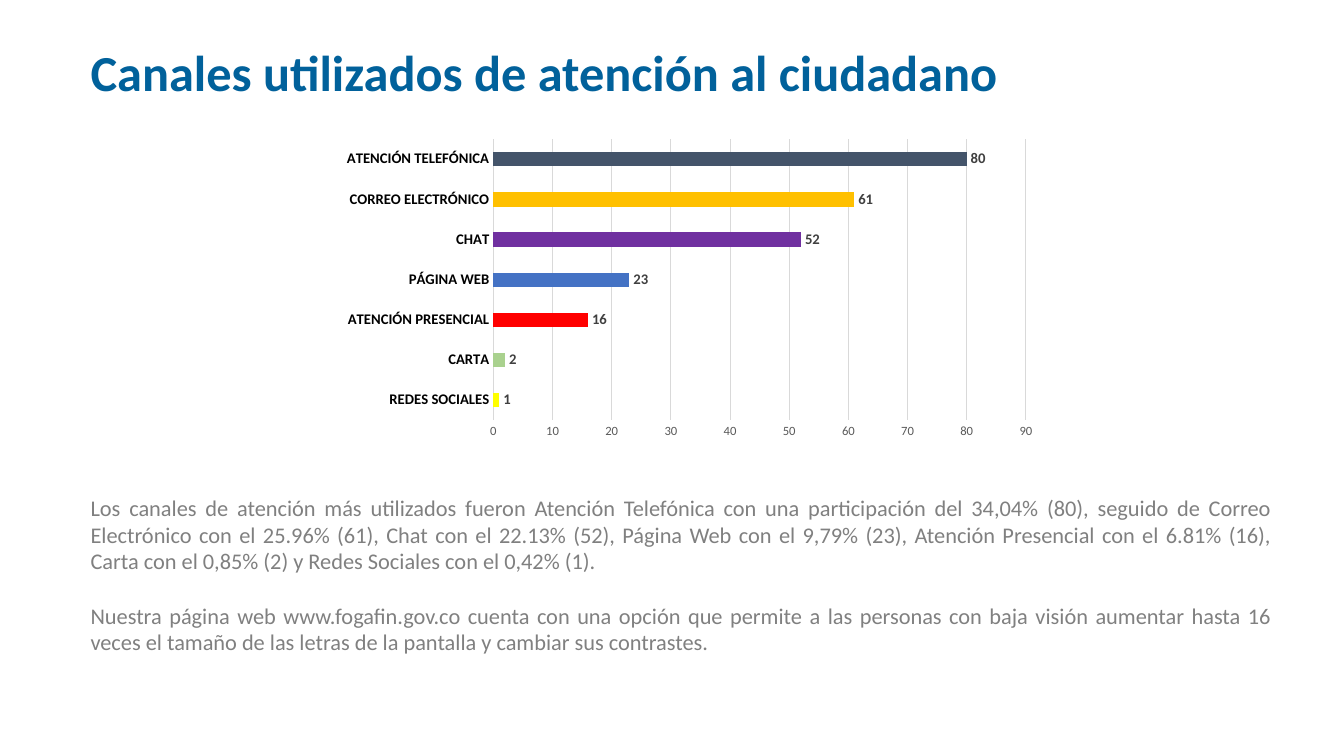
from pptx import Presentation
from pptx.chart.data import CategoryChartData
from pptx.dml.color import RGBColor
from pptx.enum.chart import XL_CHART_TYPE, XL_LABEL_POSITION, XL_TICK_MARK
from pptx.enum.text import MSO_ANCHOR, PP_ALIGN
from pptx.util import Pt

FACE = "Calibri"
BARS = [
    ("REDES SOCIALES", 1, "FFFF00"),
    ("CARTA", 2, "A9D18E"),
    ("ATENCIÓN PRESENCIAL", 16, "FF0000"),
    ("PÁGINA WEB", 23, "4472C4"),
    ("CHAT", 52, "7030A0"),
    ("CORREO ELECTRÓNICO", 61, "FFC000"),
    ("ATENCIÓN TELEFÓNICA", 80, "44546A"),
]
NOTES = [
    "Los canales de atención más utilizados fueron Atención Telefónica con una "
    "participación del 34,04% (80), seguido de Correo Electrónico con el 25.96% (61), "
    "Chat con el 22.13% (52), Página Web con el 9,79% (23), Atención Presencial con el "
    "6.81% (16), Carta con el 0,85% (2) y Redes Sociales con el 0,42% (1).",
    "Nuestra página web www.fogafin.gov.co cuenta con una opción que permite a las "
    "personas con baja visión aumentar hasta 16 veces el tamaño de las letras de la "
    "pantalla y cambiar sus contrastes.",
]


def paint(target, color):
    """Give a fill, or a font's or line's fill, a solid hex colour."""
    target.solid()
    target.fore_color.rgb = RGBColor.from_string(color)


def style(font, size, color, bold=False):
    """Set the face, size, colour and weight of a font."""
    font.name, font.size, font.bold = FACE, Pt(size), bold
    paint(font.fill, color)


def write(slide, box, texts, size, color, bold=False, align=PP_ALIGN.LEFT,
          anchor=MSO_ANCHOR.TOP, gap=0, lead=1.0):
    """Add a wrapped text box with one paragraph per text."""
    frame = slide.shapes.add_textbox(*map(Pt, box)).text_frame
    frame.word_wrap = True
    frame.vertical_anchor = anchor
    for i, text in enumerate(texts):
        para = frame.add_paragraph() if i else frame.paragraphs[0]
        para.alignment, para.line_spacing = align, lead
        para.space_before = Pt(gap if i else 0)
        run = para.add_run()
        run.text = text
        style(run.font, size, color, bold)


def rule(line):
    """Draw an axis or grid line in thin pale grey."""
    line.width = Pt(0.75)
    paint(line.fill, "D9D9D9")


def plot(slide, box):
    """Add the bar chart of contacts by channel."""
    data = CategoryChartData()
    data.categories = [name for name, _, _ in BARS]
    data.add_series("Series 1", [count for _, count, _ in BARS])
    chart = slide.shapes.add_chart(
        XL_CHART_TYPE.BAR_CLUSTERED, *map(Pt, box), data).chart
    chart.has_legend = chart.has_title = False
    style(chart.font, 10, "000000")

    names, scale = chart.category_axis, chart.value_axis
    for axis in (names, scale):
        axis.major_tick_mark = axis.minor_tick_mark = XL_TICK_MARK.NONE
    style(names.tick_labels.font, 10.5, "000000", True)
    rule(names.format.line)
    style(scale.tick_labels.font, 9, "595959")
    scale.format.line.fill.background()
    scale.minimum_scale, scale.maximum_scale, scale.major_unit = 0, 90, 10
    scale.has_major_gridlines = True
    rule(scale.major_gridlines.format.line)

    bars = chart.plots[0]
    bars.gap_width, bars.vary_by_categories = 182, False
    series = bars.series[0]
    paint(series.format.fill, "5B9BD5")
    for i, (_, _, color) in enumerate(BARS):
        paint(series.points[i].format.fill, color)
    labels = series.data_labels
    labels.show_value = True
    labels.position = XL_LABEL_POSITION.OUTSIDE_END
    style(labels.font, 10.5, "404040", True)


def build(slide, box):
    """Place the title, chart and notes within the given box."""
    left, top, width, _ = box
    write(slide, (left, top, 762.5, 78.5), ["Canales utilizados de atención al ciudadano"],
          36, "01619B", bold=True, anchor=MSO_ANCHOR.MIDDLE, lead=0.9)
    plot(slide, (left + 180, top + 80.6, 510, 223))
    write(slide, (left, top + 334.8, width, 124), NOTES, 16, "808080",
          align=PP_ALIGN.JUSTIFY, gap=19.5)


def main():
    """Build the deck and save it."""
    deck = Presentation()
    deck.slide_width, deck.slide_height = Pt(960), Pt(540)
    build(deck.slides.add_slide(deck.slide_layouts[6]), (57.6, 14.4, 858.2, 459))
    deck.save("out.pptx")


if __name__ == "__main__":
    main()
